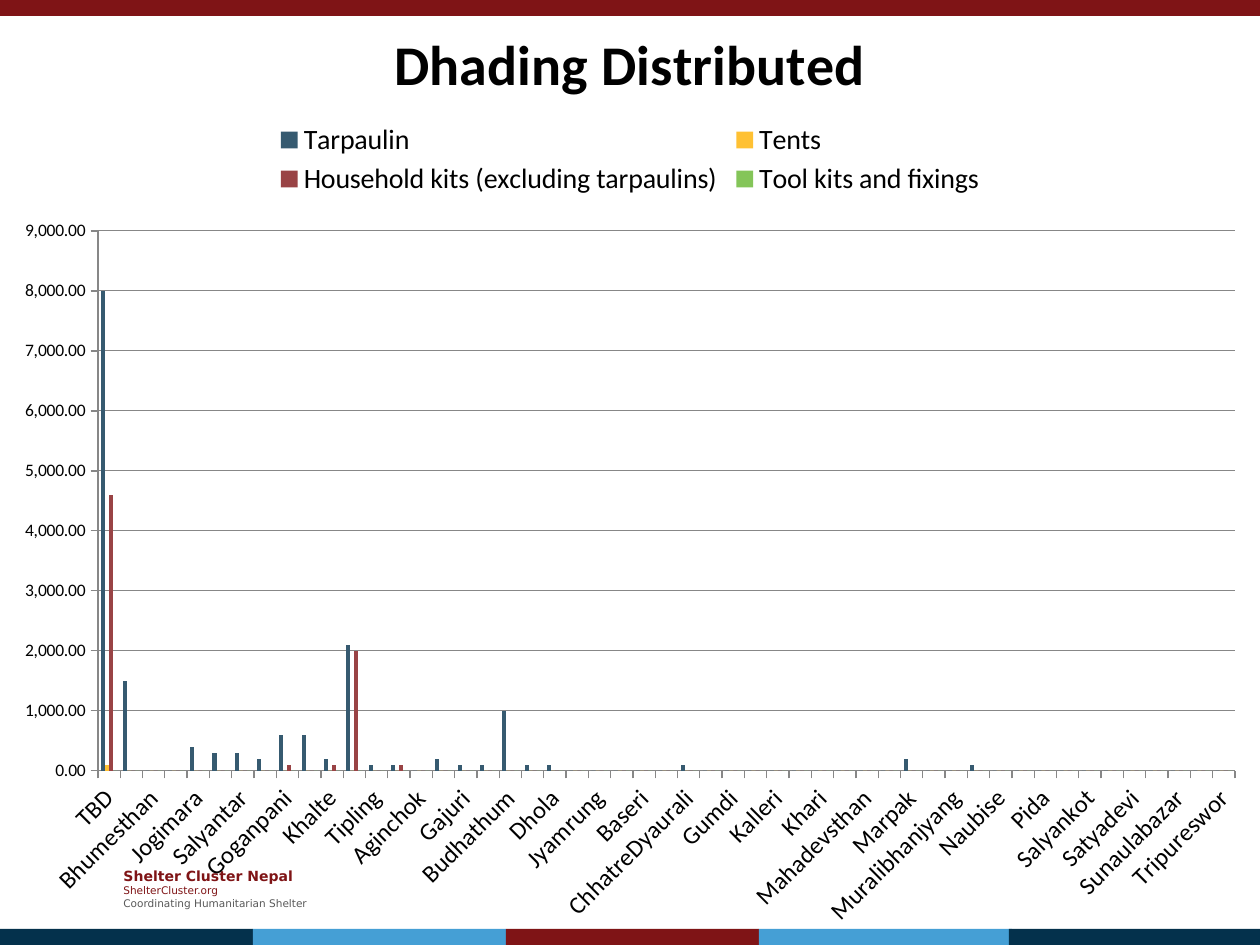
from dataclasses import dataclass

from lxml.etree import SubElement
from pptx import Presentation
from pptx.chart.chart import Chart
from pptx.chart.data import CategoryChartData
from pptx.dml.color import RGBColor
from pptx.enum.chart import XL_CHART_TYPE as ChartType
from pptx.enum.chart import XL_LEGEND_POSITION as LegendPosition
from pptx.enum.chart import XL_TICK_MARK as TickMark
from pptx.enum.shapes import MSO_SHAPE as ShapeType
from pptx.enum.text import MSO_ANCHOR as Anchor
from pptx.enum.text import MSO_AUTO_SIZE as AutoSize
from pptx.oxml import parse_xml
from pptx.oxml.ns import nsdecls, qn
from pptx.slide import Slide
from pptx.util import Emu, Pt

WIDTH, HEIGHT = 1260, 945
EMU_PER_PX = 914400 / 126

RED = RGBColor(0x7F, 0x14, 0x16)
NAVY = RGBColor(0x04, 0x31, 0x4C)
SKY = RGBColor(0x45, 0x9F, 0xD5)
GREY = RGBColor(0x59, 0x59, 0x59)
AXIS_GREY = RGBColor(0x87, 0x87, 0x87)
BLACK = RGBColor(0x00, 0x00, 0x00)
STEEL = RGBColor(0x36, 0x5A, 0x70)
AMBER = RGBColor(0xFF, 0xC1, 0x33)
BRICK = RGBColor(0x99, 0x43, 0x45)
GREEN = RGBColor(0x84, 0xC5, 0x59)


@dataclass(frozen=True)
class Band:
    left: int
    top: int
    width: int
    color: RGBColor
    height: int = 16


@dataclass(frozen=True)
class FooterLine:
    text: str
    size: int
    color: RGBColor
    bold: bool = False


@dataclass(frozen=True)
class ReliefItem:
    """One series; villages that are not listed received nothing."""
    name: str
    color: RGBColor
    amounts: dict[str, int]


BANDS = [
    Band(0, 0, WIDTH, RED),
    Band(0, 929, 253, NAVY),
    Band(253, 929, 253, SKY),
    Band(506, 929, 253, RED),
    Band(759, 929, 253, SKY),
    Band(1009, 929, 253, NAVY),
]

FOOTER = [
    FooterLine("Shelter Cluster Nepal", 8, RED, True),
    FooterLine("ShelterCluster.org", 6, RED),
    FooterLine("Coordinating Humanitarian Shelter", 6, GREY),
]

VILLAGES = [
    "TBD", "Lapa", "Bhumesthan", "Baireni", "Jogimara", "Nilkantha", "Salyantar",
    "ReeGaun", "Goganpani", "Sertung", "Khalte", "Jeewanpur", "Tipling", "Thakre",
    "Aginchok", "Benighat", "Gajuri", "Kewalpur", "Budhathum", "Dhussa", "Dhola",
    "Darkha", "Jyamrung", "Kiranchok", "Baseri", "Chainpur", "ChhatreDyaurali",
    "Dhuwakot", "Gumdi", "Jharlang", "Kalleri", "Katunje", "Khari", "Kumpur",
    "Mahadevsthan", "Maidi", "Marpak", "Mulpani", "Muralibhanjyang", "Nalang",
    "Naubise", "Phulkhark", "Pida", "Salang", "Salyankot", "Sangkosh", "Satyadevi",
    "Semjong", "Sunaulabazar", "Tasarpu", "Tripureswor",
]

RELIEF_ITEMS = [
    ReliefItem("Tarpaulin", STEEL, {
        "TBD": 8000, "Lapa": 1500, "Jogimara": 400, "Nilkantha": 300,
        "Salyantar": 300, "ReeGaun": 200, "Goganpani": 600, "Sertung": 600,
        "Khalte": 200, "Jeewanpur": 2100, "Tipling": 100, "Thakre": 100,
        "Benighat": 200, "Gajuri": 100, "Kewalpur": 100, "Budhathum": 1000,
        "Dhussa": 100, "Dhola": 100, "ChhatreDyaurali": 100, "Marpak": 200,
        "Nalang": 100,
    }),
    ReliefItem("Tents", AMBER, {"TBD": 100}),
    ReliefItem("Household kits (excluding tarpaulins)", BRICK, {
        "TBD": 4600, "Goganpani": 100, "Khalte": 100, "Jeewanpur": 2000, "Thakre": 100,
    }),
    ReliefItem("Tool kits and fixings", GREEN, {}),
]


def px(length: int) -> Emu:
    return Emu(round(length * EMU_PER_PX))


def add_band(slide: Slide, band: Band) -> None:
    shape = slide.shapes.add_shape(
        ShapeType.RECTANGLE, px(band.left), px(band.top), px(band.width), px(band.height))
    shape.shadow.inherit = False
    shape.fill.solid()
    shape.fill.fore_color.rgb = band.color
    shape.line.fill.background()


def add_footer(slide: Slide, lines: list[FooterLine]) -> None:
    frame = slide.shapes.add_textbox(px(111), px(861), px(218), px(55)).text_frame
    frame.word_wrap = True
    frame.auto_size = AutoSize.SHAPE_TO_FIT_TEXT
    frame.vertical_anchor = Anchor.MIDDLE
    for index, line in enumerate(lines):
        paragraph = frame.add_paragraph() if index else frame.paragraphs[0]
        run = paragraph.add_run()
        run.text = line.text
        run.font.name = "DejaVu Sans"
        run.font.size = Pt(line.size)
        run.font.bold = line.bold
        run.font.color.rgb = line.color


def set_layout(element, left: int, top: int, width: int = 0, height: int = 0,
               inner: bool = False) -> None:
    """Fix a chart part at a place given in px; no width keeps its own size."""
    layout = element.get_or_add_layout() if hasattr(element, "get_or_add_layout") \
        else element.find(qn("c:layout"))
    if layout is None:
        layout = parse_xml(f"<c:layout {nsdecls('c')}/>")
        element.insert(0, layout)
    for child in list(layout):
        layout.remove(child)
    manual = SubElement(layout, qn("c:manualLayout"))
    settings = [("layoutTarget", "inner")] if inner else []
    settings += [("xMode", "edge"), ("yMode", "edge"),
                 ("x", f"{left / WIDTH:.4f}"), ("y", f"{top / HEIGHT:.4f}")]
    if width:
        settings += [("w", f"{width / WIDTH:.4f}"), ("h", f"{height / HEIGHT:.4f}")]
    for tag, value in settings:
        SubElement(manual, qn(f"c:{tag}")).set("val", value)


def add_title(chart: Chart, text: str) -> None:
    chart.has_title = True
    run = chart.chart_title.text_frame.paragraphs[0].add_run()
    run.text = text
    run.font.name = "Calibri"
    run.font.size = Pt(32)
    run.font.bold = True
    run.font.color.rgb = BLACK
    set_layout(chart.chart_title._element, 384, 15)


def add_legend(chart: Chart) -> None:
    chart.has_legend = True
    chart.legend.position = LegendPosition.TOP
    chart.legend.include_in_layout = False
    chart.legend.font.size = Pt(16)
    set_layout(chart.legend._element, 271, 118, 718, 83)


def style_axes(chart: Chart) -> None:
    category_axis, value_axis = chart.category_axis, chart.value_axis
    for axis, size in ((category_axis, 14), (value_axis, 10)):
        axis.major_tick_mark = TickMark.OUTSIDE
        axis.minor_tick_mark = TickMark.NONE
        axis.format.line.color.rgb = AXIS_GREY
        axis.tick_labels.font.size = Pt(size)
    category_axis._element.txPr.find(qn("a:bodyPr")).set("rot", "-2700000")
    skip = parse_xml(f'<c:tickLblSkip {nsdecls("c")} val="2"/>')
    category_axis._element.find(qn("c:noMultiLvlLbl")).addprevious(skip)
    value_axis.minimum_scale = 0
    value_axis.maximum_scale = 9000
    value_axis.major_unit = 1000
    value_axis.has_major_gridlines = True
    value_axis.major_gridlines.format.line.color.rgb = AXIS_GREY
    value_axis.major_gridlines.format.line.width = Pt(0.5)
    value_axis.tick_labels.number_format = "#,##0.00"
    value_axis.tick_labels.number_format_is_linked = False


def add_relief_chart(slide: Slide, items: list[ReliefItem]) -> None:
    data = CategoryChartData()
    data.categories = VILLAGES
    for item in items:
        data.add_series(item.name, [item.amounts.get(village, 0) for village in VILLAGES])
    chart = slide.shapes.add_chart(
        ChartType.COLUMN_CLUSTERED, 0, 0, px(WIDTH), px(HEIGHT), data).chart
    chart.font.name = "Calibri"
    chart.font.size = Pt(10)
    chart.font.color.rgb = BLACK
    clear_fill = parse_xml(
        f'<c:spPr {nsdecls("c", "a")}><a:noFill/><a:ln><a:noFill/></a:ln></c:spPr>')
    chart._chartSpace.chart.addnext(clear_fill)

    plot = chart.plots[0]
    plot.vary_by_categories = False
    plot.gap_width = 150
    plot.overlap = 0
    for series, item in zip(plot.series, items):
        series.format.fill.solid()
        series.format.fill.fore_color.rgb = item.color
    add_title(chart, "Dhading Distributed")
    add_legend(chart)
    style_axes(chart)
    set_layout(chart._chartSpace.chart.plotArea, 98, 231, 1137, 540, inner=True)


def main() -> None:
    presentation = Presentation()
    presentation.slide_width, presentation.slide_height = px(WIDTH), px(HEIGHT)
    slide = presentation.slides.add_slide(presentation.slide_layouts[6])
    add_footer(slide, FOOTER)
    for band in BANDS:
        add_band(slide, band)
    add_relief_chart(slide, RELIEF_ITEMS)
    presentation.save("out.pptx")


if __name__ == "__main__":
    main()
